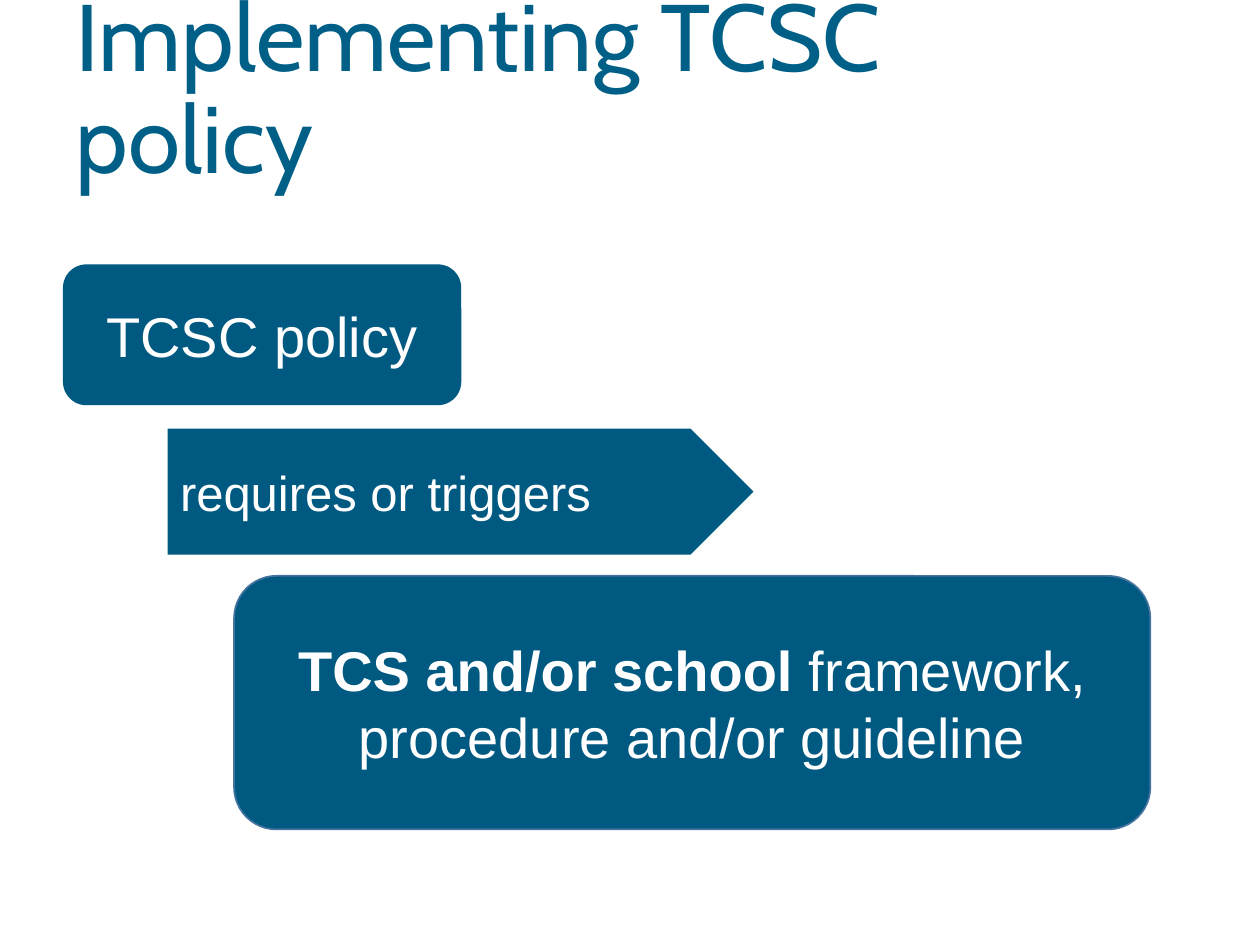
from pptx import Presentation
from pptx.dml.color import RGBColor
from pptx.enum.shapes import MSO_SHAPE
from pptx.enum.text import MSO_ANCHOR, MSO_AUTO_SIZE, PP_ALIGN
from pptx.util import Cm, Pt

ROUNDED = MSO_SHAPE.ROUNDED_RECTANGLE
PENTAGON = MSO_SHAPE.PENTAGON
LEFT, CENTER = PP_ALIGN.LEFT, PP_ALIGN.CENTER
MIDDLE, BOTTOM = MSO_ANCHOR.MIDDLE, MSO_ANCHOR.BOTTOM
NO_AUTOFIT = MSO_AUTO_SIZE.NONE
TITLE_ONLY = 5
BLUE, TITLE_BLUE, EDGE_BLUE, WHITE = "005981", "005F86", "43739E", "FFFFFF"


def color(value):
    """Turn a hex string into a colour."""
    return RGBColor.from_string(value)


def write_text(shape, text, bold_lead="", size=32, font="Arial", fill=WHITE,
               align=CENTER, anchor=MIDDLE, line_spacing=None):
    """Write one paragraph, with an optional bold opening."""
    frame = shape.text_frame
    frame.word_wrap = True
    frame.auto_size = NO_AUTOFIT
    frame.vertical_anchor = anchor
    paragraph = frame.paragraphs[0]
    paragraph.alignment = align
    paragraph.line_spacing = line_spacing
    for content, bold in ((bold_lead, True), (text, False)):
        if content:
            run = paragraph.add_run()
            run.text = content
            run.font.name = font
            run.font.size = Pt(size)
            run.font.bold = bold
            run.font.color.rgb = color(fill)


def add_title(slide, text):
    """Place and fill the title placeholder."""
    title = slide.shapes.title
    title.left, title.top = Cm(1.27), Cm(1.9)
    title.width, title.height = Cm(21.89), Cm(2.13)
    write_text(title, text, size=54, font="Cabin", fill=TITLE_BLUE,
               align=LEFT, anchor=BOTTOM, line_spacing=0.9)


def add_step(slide, kind, box, text, edge=None, **text_format):
    """Add one blue step of the policy cascade."""
    shape = slide.shapes.add_shape(kind, *(Cm(length) for length in box))
    shape.shadow.inherit = False
    shape.fill.solid()
    shape.fill.fore_color.rgb = color(BLUE)
    if edge:
        shape.line.color.rgb = color(edge)
        shape.line.width = Pt(1)
    else:
        shape.line.fill.background()
    write_text(shape, text, **text_format)


def main():
    """Build and save the slide."""
    presentation = Presentation()
    presentation.slide_width, presentation.slide_height = Cm(25.4), Cm(19.05)
    slide = presentation.slides.add_slide(presentation.slide_layouts[TITLE_ONLY])
    add_title(slide, "Implementing TCSC policy")
    add_step(slide, ROUNDED, (1.27, 5.33, 8.03, 2.84), "TCSC policy")
    add_step(slide, PENTAGON, (3.38, 8.64, 11.81, 2.54), "requires or triggers",
             size=28, align=LEFT)
    add_step(slide, ROUNDED, (4.72, 11.61, 18.47, 5.11),
             " framework, procedure and/or guideline",
             bold_lead="TCS and/or school", edge=EDGE_BLUE)
    presentation.save("out.pptx")


if __name__ == "__main__":
    main()
